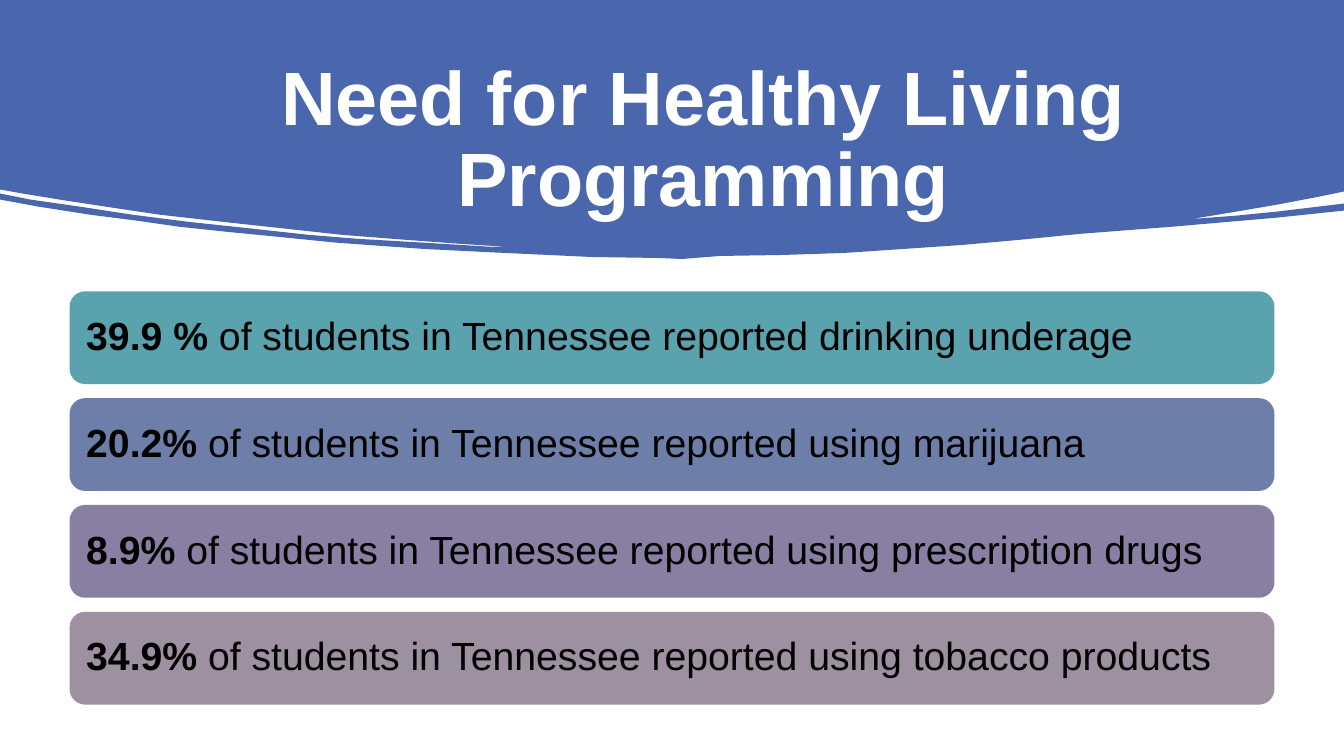
from pptx import Presentation
from pptx.dml.color import RGBColor
from pptx.enum.shapes import MSO_SHAPE
from pptx.enum.text import MSO_ANCHOR, MSO_AUTO_SIZE, PP_ALIGN
from pptx.util import Inches, Pt

ROUNDED = MSO_SHAPE.ROUNDED_RECTANGLE
MIDDLE = MSO_ANCHOR.MIDDLE
NO_AUTOFIT = MSO_AUTO_SIZE.NONE
CENTER, LEFT = PP_ALIGN.CENTER, PP_ALIGN.LEFT

FONT = "Arial"
TITLE_ONLY_LAYOUT = 5
SLIDE_WIDTH, SLIDE_HEIGHT = 13.33, 7.5
COLORS = {
    "banner": "4A66AC",
    "title": "FFFFFF",
    "text": "000000",
    "drinking": "5AA2AE",
    "marijuana": "6D7FA8",
    "prescription": "887FA3",
    "tobacco": "9D90A0",
}
STATISTICS = [
    ("39.9 % ", "of students in Tennessee reported drinking underage", "drinking"),
    ("20.2% ", "of students in Tennessee reported using marijuana", "marijuana"),
    ("8.9% ", "of students in Tennessee reported using prescription drugs", "prescription"),
    ("34.9% ", "of students in Tennessee reported using tobacco products", "tobacco"),
]

# Banner outline in inches, clockwise from the top right corner
RIGHT_SWEEP = [
    (13.33, 1.9), (13.09, 1.95), (12.67, 2.03), (12.26, 2.1), (11.84, 2.17), (11.75, 2.18),
    (11.86, 2.17), (12.26, 2.14), (12.66, 2.1), (13.33, 2.02), (13.33, 2.09),
]
LOWER_EDGE = [
    (12.66, 2.16), (11.62, 2.25), (10.72, 2.32), (10.11, 2.38), (9.55, 2.43), (8.82, 2.48),
    (8.37, 2.51), (7.76, 2.53), (7.14, 2.54), (6.76, 2.57), (6.54, 2.56), (5.87, 2.55),
    (4.8, 2.5), (4.2, 2.47), (3.36, 2.41), (2.76, 2.35), (2.25, 2.3), (1.78, 2.25),
    (1.36, 2.19), (0.89, 2.13), (0.38, 2.05), (0, 1.98),
]
LEFT_SWEEP = [
    (0, 1.92), (0.3, 1.98), (0.79, 2.05), (1.31, 2.13), (1.86, 2.2), (2.42, 2.26),
    (3.06, 2.33), (3.55, 2.37), (4.24, 2.41), (4.89, 2.45), (5.04, 2.45), (4.57, 2.42),
    (4.03, 2.38), (3.39, 2.33), (2.84, 2.27), (2.29, 2.21), (1.58, 2.13), (1.11, 2.06),
    (0.65, 1.99), (0.22, 1.92), (0, 1.88),
]


def color(name):
    return RGBColor.from_string(COLORS[name])


def paint(shape, color_name):
    shape.shadow.inherit = False
    shape.fill.solid()
    shape.fill.fore_color.rgb = color(color_name)
    shape.line.fill.background()


def style_paragraph(paragraph, size, color_name, alignment):
    paragraph.alignment = alignment
    paragraph.line_spacing = 0.9
    paragraph.font.name = FONT
    paragraph.font.size = Pt(size)
    paragraph.font.color.rgb = color(color_name)


def add_banner(slide, left, top, width):
    """Draw the swept banner behind the slide title."""
    outline = [(width, 0)] + RIGHT_SWEEP + LOWER_EDGE + LEFT_SWEEP
    builder = slide.shapes.build_freeform(0, 0)
    builder.add_line_segments([(Inches(x), Inches(y)) for x, y in outline], close=True)
    banner = builder.convert_to_shape(Inches(left), Inches(top))
    paint(banner, "banner")
    slide.shapes.title._element.addprevious(banner._element)


def fill_title(slide, left, top, width, height):
    title = slide.shapes.title
    title.left, title.top = Inches(left), Inches(top)
    title.width, title.height = Inches(width), Inches(height)
    frame = title.text_frame
    frame.text = "Need for Healthy Living Programming"
    frame.word_wrap = True
    frame.auto_size = NO_AUTOFIT
    frame.vertical_anchor = MIDDLE
    heading = frame.paragraphs[0]
    style_paragraph(heading, 54, "title", CENTER)
    heading.font.bold = True


def add_statistics(slide, left, top, width, height, bar_height=0.92):
    """Spread one bar per statistic evenly down the box."""
    pitch = (height - bar_height) / (len(STATISTICS) - 1)
    for row, (share, finding, color_name) in enumerate(STATISTICS):
        bar = slide.shapes.add_shape(
            ROUNDED, Inches(left), Inches(top + row * pitch), Inches(width), Inches(bar_height)
        )
        paint(bar, color_name)
        frame = bar.text_frame
        frame.word_wrap = True
        frame.vertical_anchor = MIDDLE
        # The preset adds its own corner inset of about 0.05 inch
        frame.margin_left = frame.margin_right = Inches(0.12)
        sentence = frame.paragraphs[0]
        style_paragraph(sentence, 28, "text", LEFT)
        share_run = sentence.add_run()
        share_run.text = share
        share_run.font.bold = True
        sentence.add_run().text = finding


def main():
    presentation = Presentation()
    presentation.slide_width = Inches(SLIDE_WIDTH)
    presentation.slide_height = Inches(SLIDE_HEIGHT)
    slide = presentation.slides.add_slide(presentation.slide_layouts[TITLE_ONLY_LAYOUT])
    add_banner(slide, 0, 0, SLIDE_WIDTH)
    fill_title(slide, 0.92, 0.44, 12.11, 1.93)
    add_statistics(slide, 0.69, 2.89, 11.95, 4.1)
    presentation.save("out.pptx")


if __name__ == "__main__":
    main()
